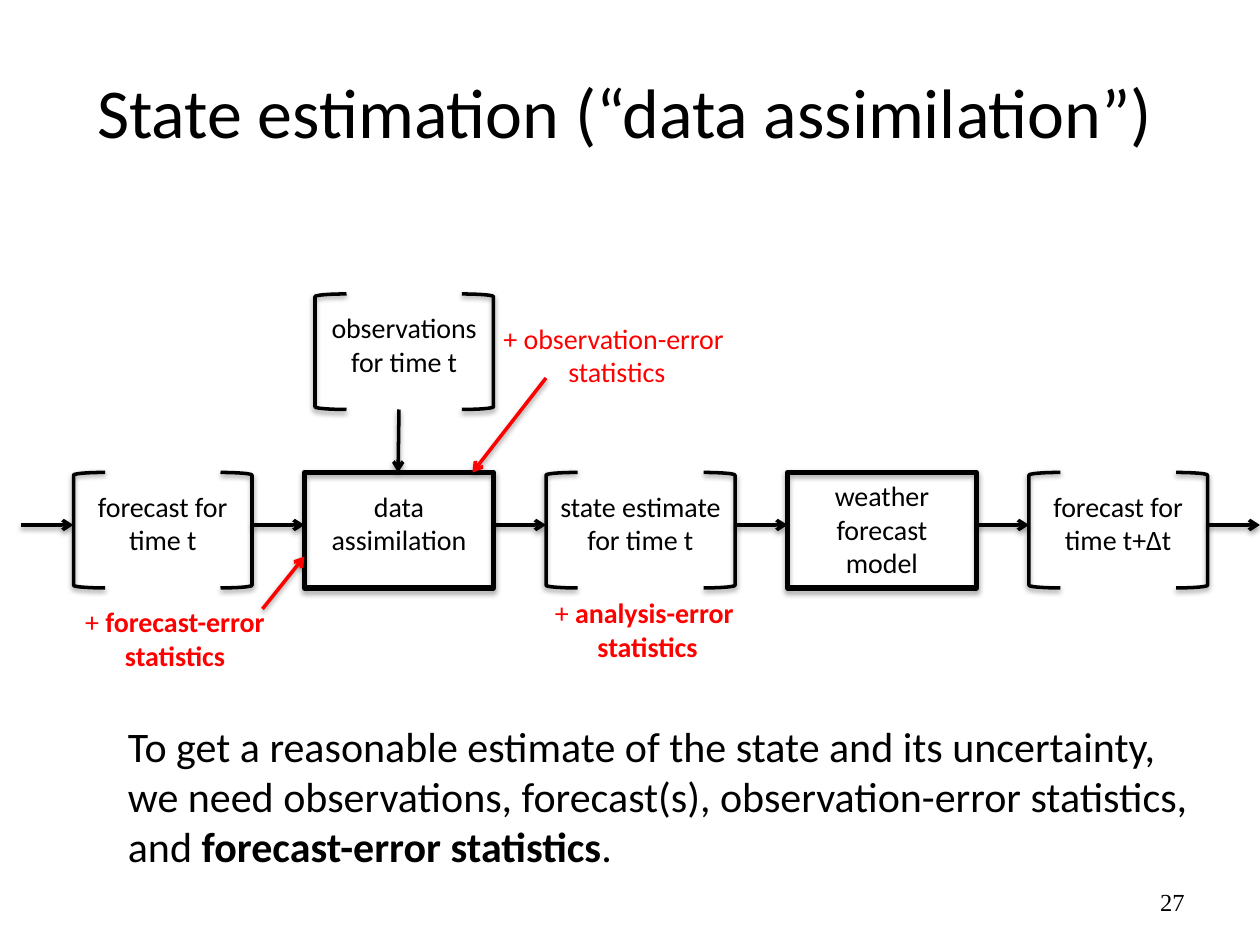
import pptx
import pptx.util
import pptx.dml.color
import pptx.enum.shapes
import pptx.enum.text
from lxml import etree

Pt = pptx.util.Pt
MSO_SHAPE = pptx.enum.shapes.MSO_SHAPE
ALIGN = pptx.enum.text.PP_ALIGN
ANCHOR = pptx.enum.text.MSO_ANCHOR
COLORS = {"ink": "000000", "error": "FF0000"}
NAMESPACE = "http://schemas.openxmlformats.org/drawingml/2006/main"
BOX_HEIGHT = 66
BRACKET_WIDTH = 18
GAP = 30


def rgb(name):
    return pptx.dml.color.RGBColor.from_string(COLORS[name])


def add_child(parent, tag, **attributes):
    return etree.SubElement(parent, f"{{{NAMESPACE}}}{tag}", attributes)


def add_shadow(shape, alpha=38, distance=1.6):
    effects = add_child(shape._element.spPr, "effectLst")
    shadow = add_child(effects, "outerShdw", blurRad=str(Pt(3.1)),
                       dist=str(Pt(distance)), dir="5400000", rotWithShape="0")
    color = add_child(shadow, "srgbClr", val=COLORS["ink"])
    add_child(color, "alpha", val=str(alpha * 1000))


def style_line(shape, color, width):
    shape.line.color.rgb = rgb(color)
    shape.line.width = Pt(width)


def add_text(slide, box, paragraphs, size=16, color="ink", font="Calibri",
             align=ALIGN.CENTER, anchor=ANCHOR.TOP, wrap=True):
    frame = slide.shapes.add_textbox(*map(Pt, box)).text_frame
    frame.word_wrap = wrap
    frame.vertical_anchor = anchor
    for index, runs in enumerate(paragraphs):
        paragraph = frame.add_paragraph() if index else frame.paragraphs[0]
        paragraph.alignment = align
        for text, bold in runs:
            run = paragraph.add_run()
            run.text = text
            run.font.color.rgb = rgb(color)
            formats = {"name": font, "size": Pt(size), "bold": bold}
            for attribute, value in formats.items():
                setattr(run.font, attribute, value)


def add_arrow(slide, start, end, color="ink"):
    arrow = slide.shapes.add_connector(
        pptx.enum.shapes.MSO_CONNECTOR.STRAIGHT, *map(Pt, start + end))
    style_line(arrow, color, 2)
    add_child(arrow.line._get_or_add_ln(), "tailEnd", type="arrow")
    add_shadow(arrow)


def add_process(slide, left, top, width):
    shape = slide.shapes.add_shape(
        MSO_SHAPE.RECTANGLE, *map(Pt, (left, top, width, BOX_HEIGHT)))
    shape.fill.background()
    style_line(shape, "ink", 3)
    add_shadow(shape, 35, 1.8)


def add_brackets(slide, left, top, width):
    for kind, offset in ((MSO_SHAPE.LEFT_BRACKET, 0),
                         (MSO_SHAPE.RIGHT_BRACKET, width - BRACKET_WIDTH)):
        box = (left + offset, top, BRACKET_WIDTH, BOX_HEIGHT)
        bracket = slide.shapes.add_shape(kind, *map(Pt, box))
        bracket.fill.background()
        style_line(bracket, "ink", 2)
        add_shadow(bracket)


def add_stage(slide, left, top, width, draw_frame, lines):
    draw_frame(slide, left, top, width)
    label_top = top if len(lines) > 2 else top + 6
    add_text(slide, (left, label_top, width, 46), [[(line, False)] for line in lines])


def add_flow(slide, left, top):
    stages = (
        (102, add_brackets, ["forecast for time t"]),
        (108, add_process, ["data assimilation"]),
        (108, add_brackets, ["state estimate for time t"]),
        (108, add_process, ["weather", "forecast", "model"]),
        (102, add_brackets, ["forecast for time t+Δt"]),
    )
    middle = top + 30
    add_arrow(slide, (left, middle), (left + GAP, middle))
    left += GAP
    for width, draw_frame, lines in stages:
        add_stage(slide, left, top, width, draw_frame, lines)
        right = left + width
        left = right + GAP
        add_arrow(slide, (right, middle), (left, middle))


def add_observations(slide, left, top):
    add_stage(slide, left, top, 102, add_brackets, ["observations for time t"])
    add_arrow(slide, (left + 48, top + BOX_HEIGHT), (left + 47.5, top + 102))


def add_error_statistics(slide, left, top):
    notes = (
        ((0, 174, 118, 46), "forecast-error ", True, False),
        ((239, 12, 145, 46), "observation-error ", False, False),
        ((263, 169, 132, 46), "analysis-error ", True, True),
    )
    for (x, y, width, height), name, bold, wrap in notes:
        add_text(slide, (left + x, top + y, width, height),
                 [[("+ ", False), (name, bold)], [("statistics", bold)]],
                 color="error", wrap=wrap)
    for start, end in (((109, 180), (133, 150)), ((271, 48), (229, 102))):
        add_arrow(slide, (left + start[0], top + start[1]),
                  (left + end[0], top + end[1]), "error")


def add_conclusion(slide, box):
    add_text(slide, box, [
        [("To get a reasonable estimate of the state and its uncertainty,", False)],
        [("we need observations, forecast(s), observation-error statistics,", False)],
        [("and ", False), ("forecast-error statistics", True), (".", False)],
    ], size=24, align=ALIGN.LEFT, wrap=False)


def main():
    presentation = pptx.Presentation()
    presentation.slide_width, presentation.slide_height = Pt(720), Pt(540)
    slide = presentation.slides.add_slide(presentation.slide_layouts[6])
    add_text(slide, (18, 18, 678, 90), [[("State estimation (“data assimilation”)", False)]],
             size=40, anchor=ANCHOR.MIDDLE)
    add_flow(slide, 12, 270)
    add_observations(slide, 180, 168)
    add_error_statistics(slide, 41, 168)
    add_conclusion(slide, (66, 408, 630, 94))
    add_text(slide, (516, 500.5, 168, 29), [[("27", False)]], size=14,
             font="Times New Roman", align=ALIGN.RIGHT, anchor=ANCHOR.MIDDLE)
    presentation.save("out.pptx")


if __name__ == "__main__":
    main()
